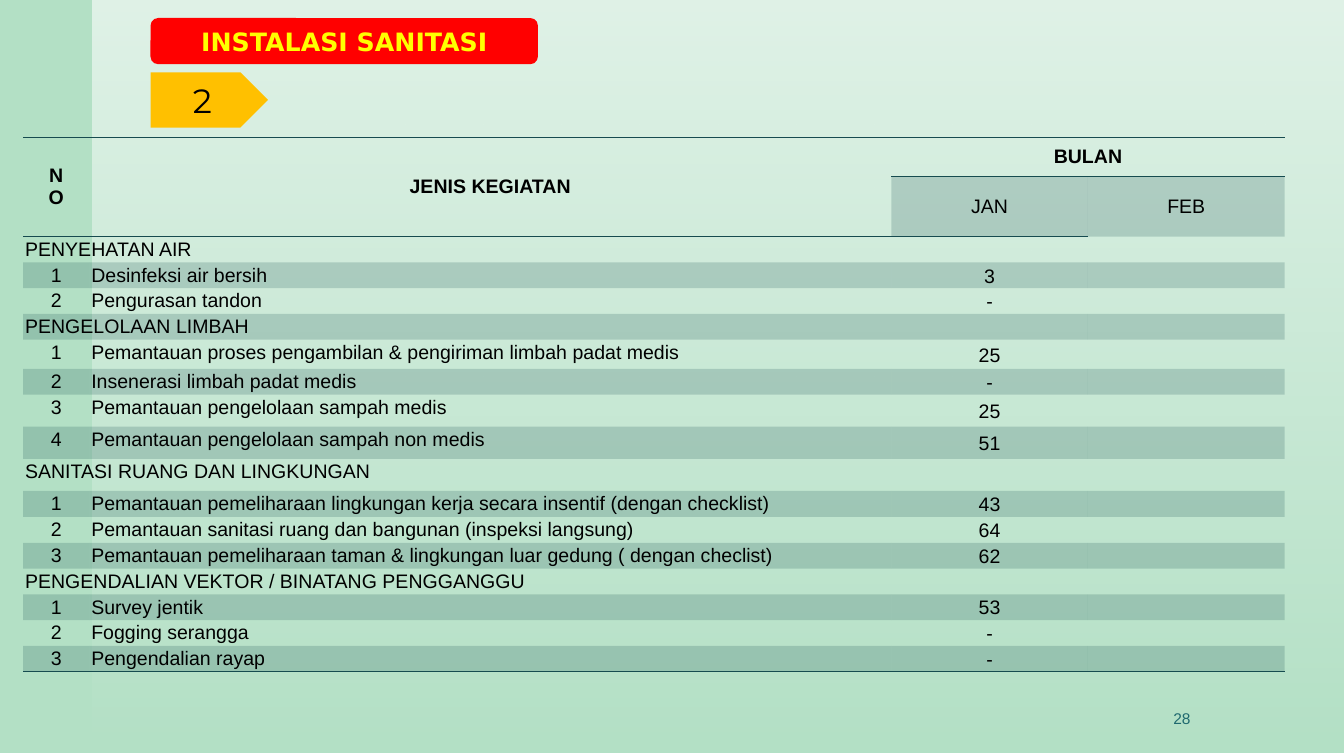
from pptx import Presentation
from pptx.dml.color import RGBColor
from pptx.enum.shapes import MSO_SHAPE as Kind
from pptx.enum.text import MSO_ANCHOR as Anchor, MSO_AUTO_SIZE as Fit, PP_ALIGN as Align
from pptx.oxml import parse_xml
from pptx.oxml.ns import nsdecls, qn
from pptx.util import Inches, Pt

DARK = "164B4F"
PLAIN = "{2D5ABB26-0587-4C30-8999-92F81FD0307C}"
WIDTHS = [0.66, 5.69, 2.3, 1.96, 1.96]
HEIGHTS = [0.39, 0.59] + [0.25] * 4 + [0.29, 0.25] + [0.32] * 3 + [0.26] + [0.25] * 6

# Each section holds its activities with the January count
PLAN = {
    "PENYEHATAN AIR": [("Desinfeksi air bersih", "3"), ("Pengurasan tandon", "-")],
    "PENGELOLAAN LIMBAH": [
        ("Pemantauan proses pengambilan & pengiriman limbah padat medis", "25"),
        ("Insenerasi limbah padat medis", "-"),
        ("Pemantauan pengelolaan sampah medis", "25"),
        ("Pemantauan pengelolaan sampah non medis", "51"),
    ],
    "SANITASI RUANG DAN LINGKUNGAN": [
        ("Pemantauan pemeliharaan lingkungan kerja secara insentif (dengan checklist)", "43"),
        ("Pemantauan sanitasi ruang dan bangunan (inspeksi langsung)", "64"),
        ("Pemantauan pemeliharaan taman & lingkungan luar gedung ( dengan checlist)", "62"),
    ],
    "PENGENDALIAN VEKTOR / BINATANG PENGGANGGU": [
        ("Survey jentik", "53"),
        ("Fogging serangga", "-"),
        ("Pengendalian rayap", "-"),
    ],
}


def color(code):
    return RGBColor.from_string(code)


def box(at):
    return [Inches(n) for n in at]


def fade(node, *levels):
    """Give the colours inside node their opacity in percent."""
    for tint, level in zip(list(node.iter(qn("a:srgbClr"))), levels):
        tint.append(parse_xml(f'<a:alpha {nsdecls("a")} val="{level * 1000}"/>'))


def write(frame, text, size, face="Arial", tint="000000", bold=False, align=Align.CENTER):
    para = frame.paragraphs[0]
    para.alignment = align
    run = para.add_run()
    run.text = text
    for key, value in dict(name=face, size=Pt(size), bold=bold).items():
        setattr(run.font, key, value)
    run.font.color.rgb = color(tint)


def shape(slide, kind, at, fill=None):
    item = slide.shapes.add_shape(kind, *box(at))
    item.shadow.inherit = False
    item.line.fill.background()
    if fill:
        item.fill.solid()
        item.fill.fore_color.rgb = color(fill)
    return item


def backdrop(slide):
    slide.background.fill.solid()
    slide.background.fill.fore_color.rgb = color("B3E0C5")
    veil = shape(slide, Kind.RECTANGLE, (0.92, 0, 12.47, 7.5))
    veil.fill.gradient()
    veil.fill.gradient_angle = 270
    for stop, place in zip(veil.fill.gradient_stops, (0, 1)):
        stop.color.rgb = color("FFFFFF")
        stop.position = place
    fade(veil.fill._xPr, 60, 0)


def heading(slide):
    at = (1.5, 0.18, 3.86, 0.46)
    shape(slide, Kind.ROUNDED_RECTANGLE, at, "FF0000")
    title = slide.shapes.title
    for key, value in zip(("left", "top", "width", "height"), box(at)):
        setattr(title, key, value)
    frame = title.text_frame
    frame.auto_size = Fit.NONE
    frame.vertical_anchor = Anchor.MIDDLE
    write(frame, "INSTALASI SANITASI", 18.1, "DejaVu Sans", "FFFF00", True)
    slide.shapes._spTree.append(title._element)


def label(slide, text, at):
    frame = slide.shapes.add_textbox(*box(at)).text_frame
    frame.word_wrap = True
    frame.vertical_anchor = Anchor.MIDDLE
    write(frame, text, 11.1, tint="1F696F", align=Align.RIGHT)


def edge(cell, *sides):
    props = cell._tc.get_or_add_tcPr()
    for spot, side in enumerate(sides):
        props.insert(spot, parse_xml(
            f'<a:{side} {nsdecls("a")} w="12700"><a:solidFill>'
            f'<a:srgbClr val="{DARK}"/></a:solidFill></a:{side}>'))


def style(cell, row, col):
    head = row < 2
    side, top, base = (0.2, 0.08, 0.08) if head else (0.02, 0.02, 0)
    look = dict(margin_left=side, margin_right=side, margin_top=top, margin_bottom=base)
    for key, value in look.items():
        setattr(cell, key, Inches(value))
    cell.vertical_anchor = Anchor.MIDDLE if head or col > 2 else Anchor.TOP
    # Keeps empty cells from stretching their row
    cell.text_frame.paragraphs[0]._p.get_or_add_endParaRPr().set("sz", "1400")
    # Every second row is tinted, in the header only below the months
    if row % 2 and (row > 1 or col > 2):
        cell.fill.solid()
        cell.fill.fore_color.rgb = color(DARK)
        fade(cell._tc.tcPr, 20)
    else:
        cell.fill.background()
    # Rules above and below the header and at the foot
    if row == 0:
        edge(cell, "a:lnT"[2:], "lnB")
    elif (row == 1 and col < 4) or row == len(HEIGHTS) - 1:
        edge(cell, "lnB")


def grid(slide):
    at = (0.23, 1.37, sum(WIDTHS), sum(HEIGHTS))
    table = slide.shapes.add_table(len(HEIGHTS), len(WIDTHS), *box(at)).table
    props = table._tbl.tblPr
    props.find(qn("a:tableStyleId")).text = PLAIN
    table.first_row = table.horz_banding = False
    for col, width in enumerate(WIDTHS):
        table.columns[col].width = Inches(width)
    for row, height in enumerate(HEIGHTS):
        table.rows[row].height = Inches(height)
        for col in range(len(WIDTHS)):
            style(table.cell(row, col), row, col)

    def put(row, col, text, last=None, **look):
        cell = table.cell(row, col)
        if last:
            cell.merge(table.cell(*last))
        if text:
            write(cell.text_frame, text, 14, **look)

    # Header
    put(0, 0, "NO", (1, 0), bold=True)
    put(0, 1, "JENIS KEGIATAN", (1, 2), bold=True)
    put(0, 3, "BULAN", (0, 4), bold=True)
    put(1, 3, "JAN")
    put(1, 4, "FEB")

    # Sections and their activities
    row = 2
    for name, tasks in PLAN.items():
        first = row == 2
        put(row, 0, name, (row, 1 if first else 3), align=Align.LEFT)
        if first:
            put(row, 2, "", (row, 3))
        for num, (task, count) in enumerate(tasks, 1):
            put(row + num, 0, str(num))
            put(row + num, 1, task, (row + num, 2), align=Align.LEFT)
            put(row + num, 3, count)
        row += len(tasks) + 1


def main():
    deck = Presentation()
    deck.slide_width, deck.slide_height = Inches(13.39), Inches(7.5)
    slide = deck.slides.add_slide(deck.slide_layouts[5])
    backdrop(slide)
    label(slide, "28", (8.84, 6.95, 3.12, 0.4))
    heading(slide)
    badge = shape(slide, Kind.PENTAGON, (1.5, 0.72, 1.17, 0.55), "FFC000")
    write(badge.text_frame, "2", 24.1, "Montserrat")
    grid(slide)
    deck.save("out.pptx")


if __name__ == "__main__":
    main()
